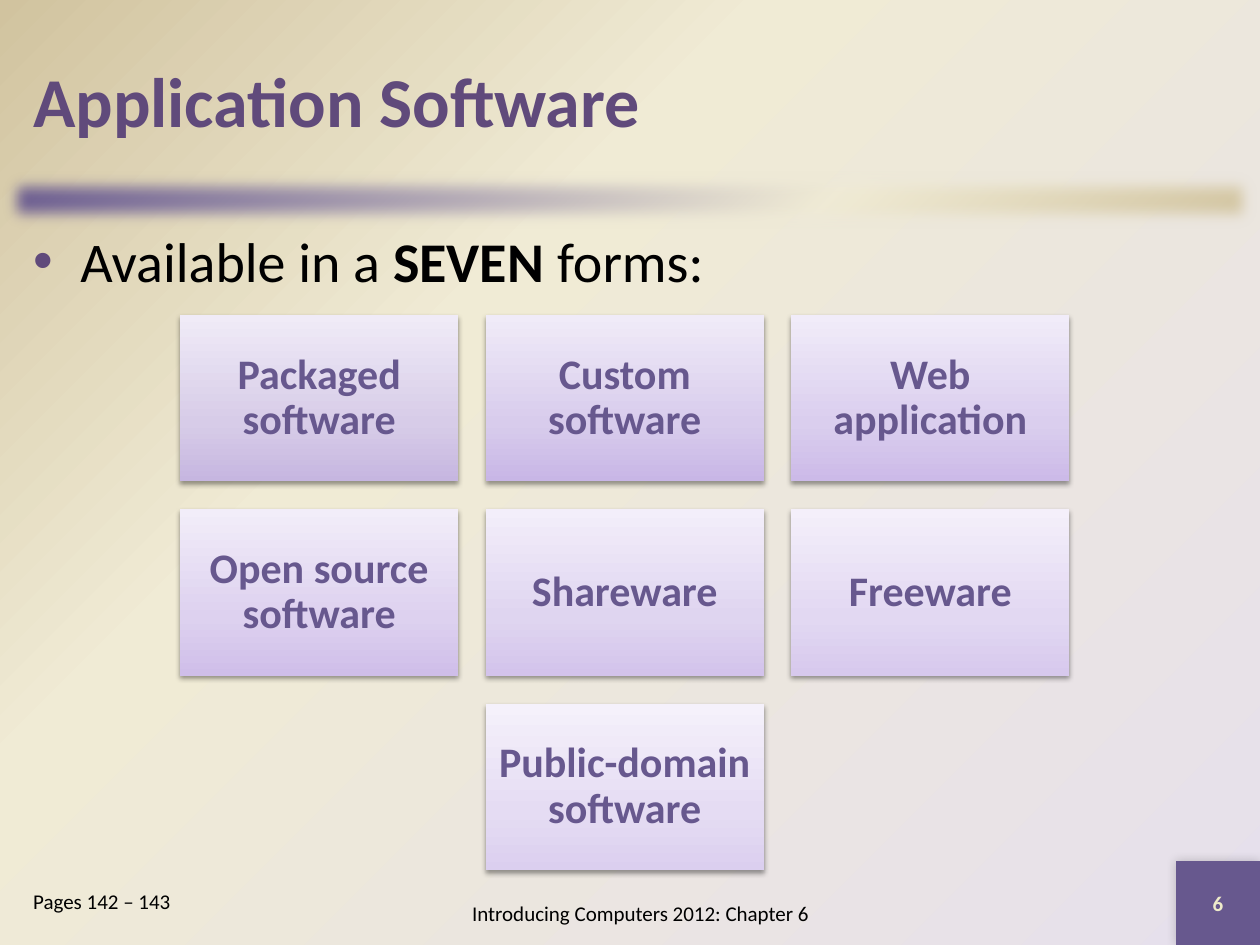
from lxml.etree import SubElement
from pptx import Presentation
from pptx.dml.color import RGBColor
from pptx.enum.shapes import MSO_SHAPE as Preset
from pptx.enum.text import MSO_ANCHOR as Anchor, PP_ALIGN as Align
from pptx.oxml.ns import qn
from pptx.util import Cm, Pt

COLORS = {
    "purple": "67588E", "title": "604A7B", "text": "000000", "number": "EEEBCA",
    "lilac": "E6E0EC", "cream": "F0EBD5", "sand": "D1C39F",
}
# Label and gradient, from the bottom of the card to its top
FORMS = [
    ("Packaged software", ("C6B6E0", "D7CCE8", "F0EBF7")),
    ("Custom software", ("C8B6E6", "D8CCEC", "F0EBF8")),
    ("Web application", ("CCBAE8", "DACEEE", "F1ECF9")),
    ("Open source software", ("CFBEE9", "DDD1EF", "F2EDF9")),
    ("Shareware", ("D3C3EB", "DFD5F0", "F3EEFA")),
    ("Freeware", ("D7C9ED", "E2D8F2", "F4EFFA")),
    ("Public-domain software", ("DBCFEF", "E5DCF3", "F5F1FB")),
]
COLUMNS = 3


def add(parent, tag, **attributes):
    """Append a DrawingML element."""
    return SubElement(parent, qn(tag), {k: str(v) for k, v in attributes.items()})


class Deck:
    font = "Calibri"

    def __init__(self, slide):
        self.slide = slide

    def gradient(self, fill, holder, colors, middle, angle=None):
        """Three-stop gradient: linear at an angle, else radial from bottom right."""
        fill.gradient()
        grad = holder.find(qn("a:gradFill"))
        for child in list(grad):
            grad.remove(child)
        stops = add(grad, "a:gsLst")
        for position, color in zip((0, middle, 100), colors):
            add(add(stops, "a:gs", pos=position * 1000), "a:srgbClr", val=color)
        if angle is None:
            radial = add(grad, "a:path", path="circle")
            add(radial, "a:fillToRect", l=100000, t=100000)
        else:
            add(grad, "a:lin", ang=angle * 60000, scaled=0)

    def background(self, colors):
        fill = self.slide.background.fill
        fill.gradient()
        holder = next(self.slide.element.iter(qn("p:bgPr")))
        self.gradient(fill, holder, colors, 65)

    def label(self, shape, runs, size, color, bold=False, align=Align.LEFT,
              anchor=Anchor.MIDDLE):
        """Put one paragraph into a shape; runs are (text, bold) pairs or a string."""
        frame = shape.text_frame
        frame.word_wrap = True
        frame.vertical_anchor = anchor
        paragraph = frame.paragraphs[0]
        paragraph.alignment = align
        font = paragraph.font
        font.name, font.size, font.bold = self.font, Pt(size), bold
        font.color.rgb = RGBColor.from_string(COLORS[color])
        if isinstance(runs, str):
            paragraph.add_run().text = runs
        else:
            for text, strong in runs:
                run = paragraph.add_run()
                run.text = text
                run.font.bold = strong
        return paragraph

    def text(self, box, runs, size, color, **style):
        shape = self.slide.shapes.add_textbox(*map(Cm, box))
        return self.label(shape, runs, size, color, **style)

    def bullet(self, paragraph, indent, color):
        properties = paragraph._p.get_or_add_pPr()
        properties.set("marL", str(Cm(indent)))
        properties.set("indent", str(-Cm(indent)))
        mark = add(properties, "a:buClr")
        add(mark, "a:srgbClr", val=COLORS[color])
        add(properties, "a:buFont", typeface="Arial")
        add(properties, "a:buChar", char="•")
        # Default run properties come after the bullet in the schema
        properties.append(properties.find(qn("a:defRPr")))

    def rectangle(self, box):
        shape = self.slide.shapes.add_shape(Preset.RECTANGLE, *map(Cm, box))
        shape.line.fill.background()
        shape.shadow.inherit = False
        return shape

    def effects(self, shape):
        return shape.element.spPr.find(qn("a:effectLst"))

    def shadow(self, shape, opacity, blur, distance, angle):
        outer = add(self.effects(shape), "a:outerShdw", blurRad=Pt(blur),
                    dist=Pt(distance), dir=angle * 60000, rotWithShape=0)
        add(add(outer, "a:srgbClr", val=COLORS["text"]), "a:alpha", val=opacity * 1000)

    def divider(self, box, colors):
        bar = self.rectangle(box)
        self.gradient(bar.fill, bar.element.spPr, colors, 65, angle=45)
        add(self.effects(bar), "a:softEdge", rad=Pt(9))

    def page_number(self, box, number):
        corner = self.rectangle(box)
        corner.fill.solid()
        corner.fill.fore_color.rgb = RGBColor.from_string(COLORS["purple"])
        self.shadow(corner, 20, 6, 0, 225)
        self.label(corner, number, 12, "number", bold=True, align=Align.CENTER)

    def card(self, box, name, colors):
        card = self.rectangle(box)
        self.gradient(card.fill, card.element.spPr, colors, 35, angle=270)
        self.shadow(card, 38, 3.1, 1.6, 90)
        frame = card.text_frame
        frame.margin_left = frame.margin_right = Cm(0.25)
        frame.margin_top = frame.margin_bottom = Cm(0.25)
        paragraph = self.label(card, name, 24, "purple", bold=True, align=Align.CENTER)
        paragraph.line_spacing = 0.9
        paragraph.space_after = Pt(8.4)


def main():
    presentation = Presentation()
    presentation.slide_width, presentation.slide_height = Cm(25.4), Cm(19.05)
    deck = Deck(presentation.slides.add_slide(presentation.slide_layouts[6]))

    # Backdrop, divider and page number
    deck.background([COLORS[name] for name in ("lilac", "cream", "sand")])
    deck.divider((0, 3.39, 25.4, 1.27),
                 [COLORS[name] for name in ("purple", "cream", "sand")])
    deck.page_number((23.71, 17.36, 1.69, 1.69), "6")

    # Title and lead-in
    deck.text((0.42, 0.42, 24.55, 3.18), "Application Software", 40, "title", bold=True)
    lead_in = deck.text((0.42, 4.45, 24.55, 1.8),
                        [("Available in a ", False), ("SEVEN", True), (" forms:", False)],
                        32, "text", anchor=Anchor.TOP)
    lead_in.space_before = Pt(6.4)
    deck.bullet(lead_in, 0.95, "title")

    # Cards in rows of three, the last row centred
    left, top, width, height = 3.63, 6.35, 5.61, 3.35
    step_x, step_y = 6.16, 3.92
    for index, (name, colors) in enumerate(FORMS):
        row, column = divmod(index, COLUMNS)
        in_row = min(COLUMNS, len(FORMS) - row * COLUMNS)
        column += (COLUMNS - in_row) / 2
        deck.card((left + column * step_x, top + row * step_y, width, height),
                  name, colors)

    # Footer
    pages = deck.text((0.42, 17.78, 4.65, 1.27), "Pages 142 – 143", 12, "text",
                      anchor=Anchor.TOP)
    pages.space_before = Pt(2.4)
    deck.text((7.62, 17.78, 10.59, 1.27), "Introducing Computers 2012: Chapter 6",
              12, "text", align=Align.CENTER)

    presentation.save("out.pptx")


if __name__ == "__main__":
    main()
